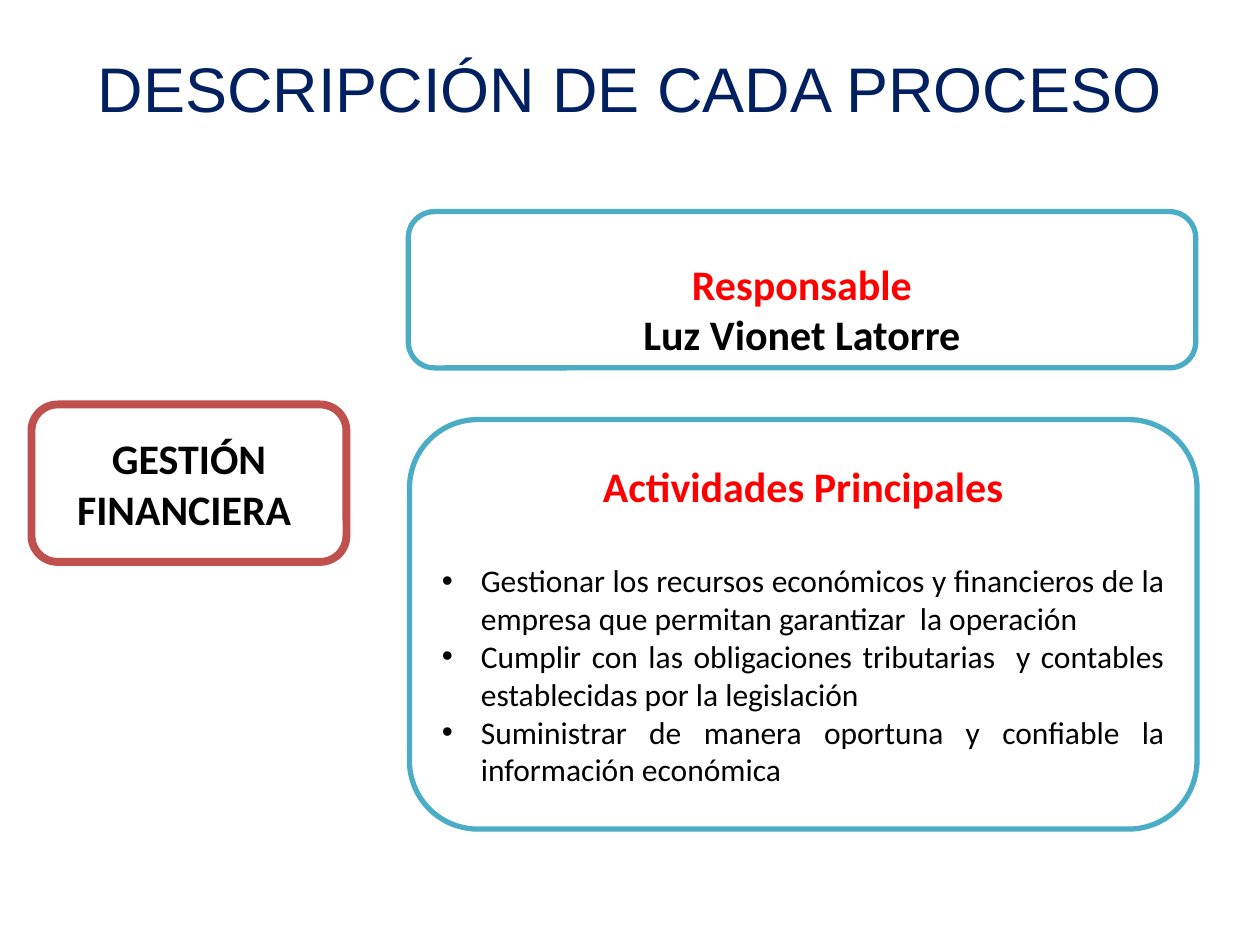
"""Build the slide describing the financial management process."""
from lxml.etree import SubElement
from pptx import Presentation
from pptx.dml.color import RGBColor
from pptx.enum.shapes import MSO_SHAPE as Shape
from pptx.enum.text import MSO_ANCHOR as Anchor, PP_ALIGN as Align
from pptx.oxml.ns import qn
from pptx.util import Inches, Pt

NAVY = RGBColor(0x00, 0x20, 0x60)
BRICK = RGBColor(0xC0, 0x50, 0x4D)
TEAL = RGBColor(0x4B, 0xAC, 0xC6)
RED = RGBColor(0xFF, 0x00, 0x00)
BLACK = RGBColor(0x00, 0x00, 0x00)
WHITE = RGBColor(0xFF, 0xFF, 0xFF)

TITLE = {"name": "Arial", "size": Pt(36), "bold": False}
HEADING = {"name": "Calibri", "size": Pt(24), "bold": True}
BODY = {"name": "Calibri", "size": Pt(18), "bold": False}
BULLET_INDENT = Inches(0.31)


def write(paragraph, text, style, color, align=Align.CENTER):
    paragraph.text = text
    paragraph.alignment = align
    for attribute, value in style.items():
        setattr(paragraph.font, attribute, value)
    paragraph.font.color.rgb = color


def add_panel(left, top, width, height, color, weight):
    panel = slide.shapes.add_shape(
        Shape.ROUNDED_RECTANGLE, Inches(left), Inches(top), Inches(width), Inches(height))
    panel.shadow.inherit = False
    panel.fill.solid()
    panel.fill.fore_color.rgb = WHITE
    panel.line.color.rgb = color
    panel.line.width = Pt(weight)
    panel.text_frame.word_wrap = True
    panel.text_frame.vertical_anchor = Anchor.MIDDLE
    return panel.text_frame


prs = Presentation()
prs.slide_width, prs.slide_height = Inches(10), Inches(7.5)
slide = prs.slides.add_slide(prs.slide_layouts[6])

title = slide.shapes.add_textbox(Inches(0.5), Inches(0.3), Inches(9), Inches(0.78)).text_frame
title.word_wrap = True
title.vertical_anchor = Anchor.MIDDLE
write(title.paragraphs[0], "DESCRIPCIÓN DE CADA PROCESO", TITLE, NAVY)

process = add_panel(0.25, 3.21, 2.5, 1.25, BRICK, 4.5)
write(process.paragraphs[0], "GESTIÓN FINANCIERA ", HEADING, BLACK)

responsible = add_panel(3.24, 1.68, 6.25, 1.24, TEAL, 3)
responsible.margin_top = Inches(0.35)
write(responsible.paragraphs[0], "Responsable", HEADING, RED)
write(responsible.add_paragraph(), "Luz Vionet Latorre", HEADING, BLACK)

activities = add_panel(3.25, 3.33, 6.25, 3.25, TEAL, 3)
write(activities.paragraphs[0], "Actividades Principales", HEADING, RED)
activities.paragraphs[0].space_after = Pt(29)

for activity in (
    "Gestionar los recursos económicos y financieros de la empresa que permitan garantizar  la operación ",
    "Cumplir con las obligaciones tributarias  y contables establecidas por la legislación",
    "Suministrar de manera oportuna y confiable la información económica ",
):
    item = activities.add_paragraph()
    properties = item._p.get_or_add_pPr()
    properties.set("marL", str(BULLET_INDENT))
    properties.set("indent", str(-BULLET_INDENT))
    SubElement(properties, qn("a:buFont"), typeface="Arial")
    SubElement(properties, qn("a:buChar"), char="•")
    write(item, activity, BODY, BLACK, Align.JUSTIFY)

prs.save("out.pptx")
